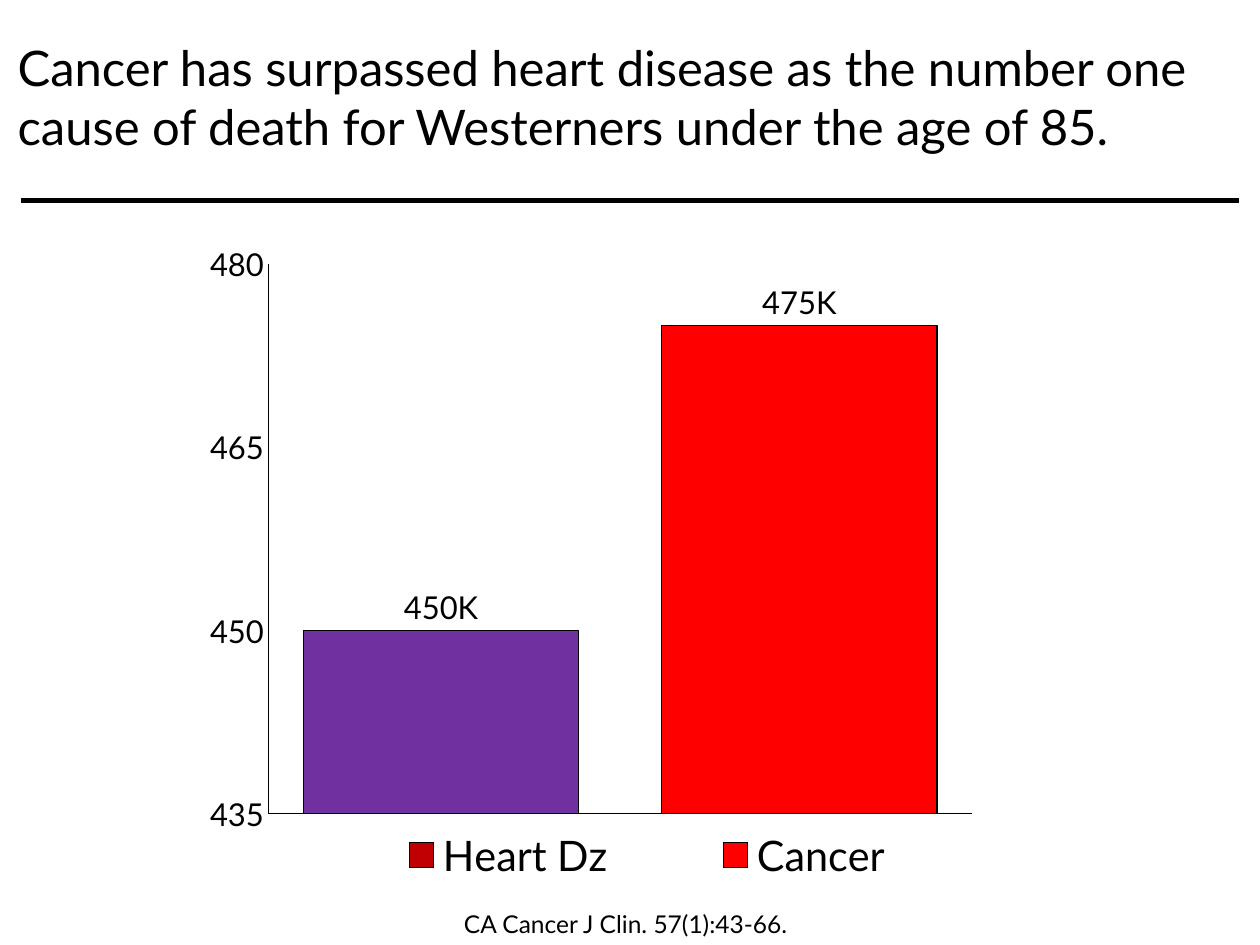
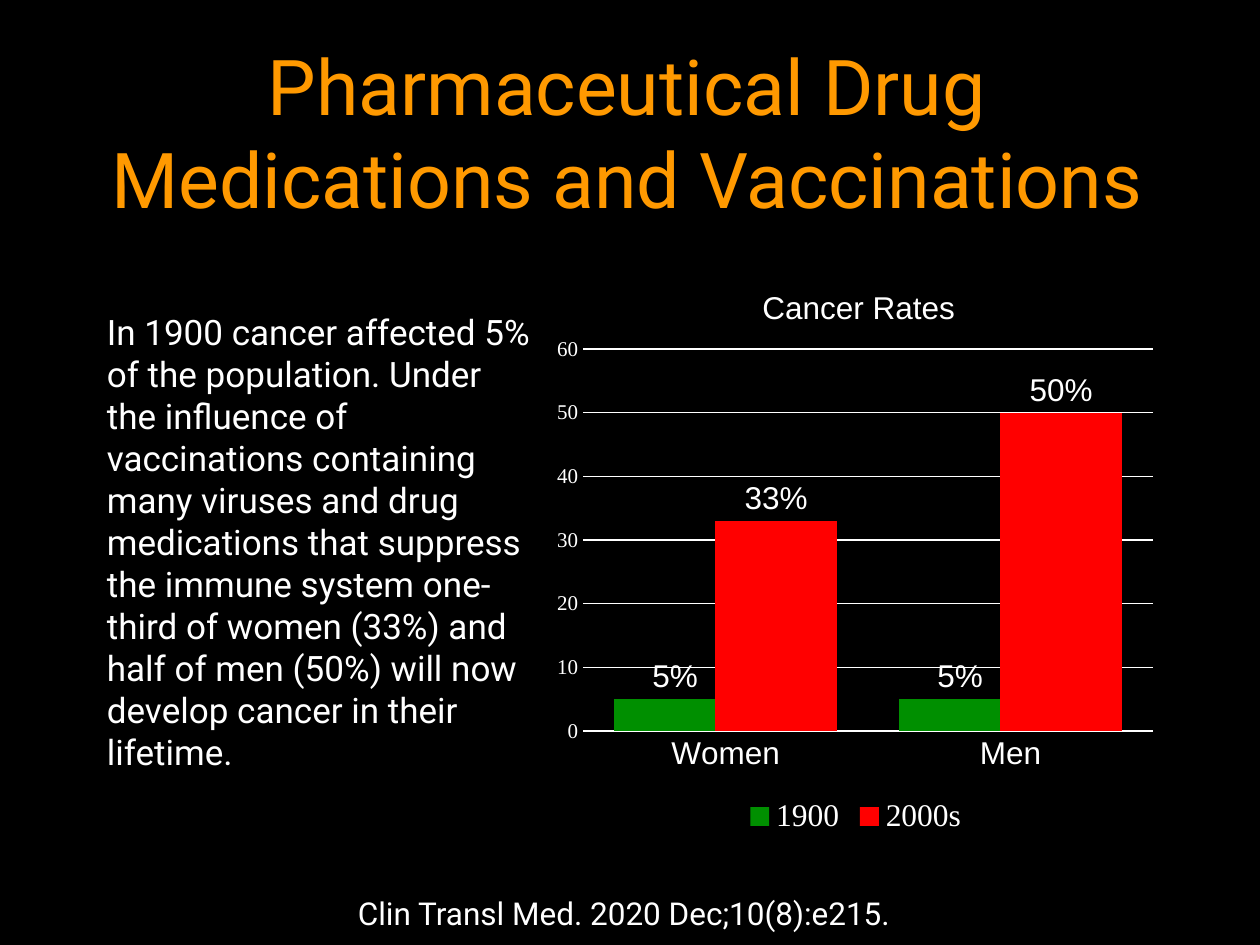
from dataclasses import dataclass, field
from typing import Any, NamedTuple, Optional

from lxml.etree import SubElement
from pptx import Presentation
from pptx.chart.data import CategoryChartData
from pptx.dml.color import RGBColor
from pptx.enum.chart import XL_CHART_TYPE as ChartType
from pptx.enum.chart import XL_LABEL_POSITION as LabelPos
from pptx.enum.chart import XL_LEGEND_POSITION as LegendPos
from pptx.enum.chart import XL_TICK_MARK as TickMark
from pptx.enum.shapes import MSO_CONNECTOR as Connector
from pptx.enum.text import MSO_ANCHOR as Anchor
from pptx.enum.text import PP_ALIGN as Align
from pptx.oxml.ns import qn
from pptx.util import Inches, Pt

# Slide grid: 120 columns by 90 rows
COLUMNS, ROWS = 120, 90
WIDTH, HEIGHT = Inches(10), Inches(7.5)

COLORS = {
    "black": "000000",
    "white": "FFFFFF",
    "orange": "FF9900",
    "dark_red": "C00000",
    "purple": "7030A0",
    "red": "FF0000",
    "green": "008F00",
}


class Area(NamedTuple):
    col: float
    row: float
    cols: float
    rows: float

    def emu(self) -> tuple[int, int, int, int]:
        return (int(self.col * WIDTH / COLUMNS), int(self.row * HEIGHT / ROWS),
                int(self.cols * WIDTH / COLUMNS), int(self.rows * HEIGHT / ROWS))


class Type(NamedTuple):
    face: str
    points: int
    color: str


@dataclass
class Words:
    text: str
    area: Area
    type: Type
    wrap: bool = True
    align: Align = Align.LEFT
    anchor: Anchor = Anchor.TOP


@dataclass
class Bars:
    name: str
    values: tuple[int, ...]
    color: str
    point_colors: dict[int, str] = field(default_factory=dict)


@dataclass
class ColumnChart:
    area: Area
    categories: tuple[str, ...]
    bars: tuple[Bars, ...]
    gap: int
    overlap: int
    scale: tuple[int, int, int]  # minimum, maximum, step
    label_format: str
    label_type: Type
    category_type: Type
    value_type: Type
    legend_type: Type
    axis_color: str
    grid_color: str
    layouts: dict[str, tuple[float, ...]]  # shares of the chart's size
    value_line: bool = False
    outlined: bool = False
    title: str = ""


def rgb(color: str) -> RGBColor:
    return RGBColor.from_string(COLORS[color])


def assign(target: Any, values: dict[str, Any]) -> None:
    for name, value in values.items():
        setattr(target, name, value)


def set_font(font: Any, type_: Type) -> None:
    assign(font, {"name": type_.face, "size": Pt(type_.points), "bold": False})
    font.color.rgb = rgb(type_.color)


def set_line(line: Any, color: str, points: float = 0.75) -> None:
    line.color.rgb = rgb(color)
    line.width = Pt(points)


def new_slide(deck: Any, background: str) -> Any:
    slide = deck.slides.add_slide(deck.slide_layouts[6])
    slide.background.fill.solid()
    slide.background.fill.fore_color.rgb = rgb(background)
    return slide


def draw_words(slide: Any, words: Words) -> None:
    frame = slide.shapes.add_textbox(*words.area.emu()).text_frame
    assign(frame, {"word_wrap": words.wrap, "vertical_anchor": words.anchor,
                   "text": words.text})
    paragraph = frame.paragraphs[0]
    paragraph.alignment = words.align
    set_font(paragraph.runs[0].font, words.type)


def draw_rule(slide: Any, area: Area, color: str, points: float) -> None:
    left, top, width, height = area.emu()
    rule = slide.shapes.add_connector(
        Connector.STRAIGHT, left, top, left + width, top + height)
    set_line(rule.line, color, points)
    SubElement(rule._element.spPr, qn("a:effectLst"))


def place(chart: Any, part: str, shares: tuple[float, ...]) -> None:
    """Fix a chart part by x, y and, if given, width and height."""
    parent = chart.element.xpath(f"c:chart/c:{part}")[0]
    for previous in parent.findall(qn("c:layout")):
        parent.remove(previous)
    layout = SubElement(parent, qn("c:layout"))
    leading = [child for child in parent if child.tag in (qn("c:tx"), qn("c:legendPos"))]
    parent.insert(len(leading), layout)
    manual = SubElement(layout, qn("c:manualLayout"))
    settings = {"layoutTarget": "inner"} if part == "plotArea" else {}
    settings |= {"xMode": "edge", "yMode": "edge"}
    settings |= dict(zip("xywh", map(str, shares)))
    for tag, value in settings.items():
        SubElement(manual, qn(f"c:{tag}")).set("val", value)


def style_axes(chart: Any, look: ColumnChart) -> None:
    minimum, maximum, step = look.scale
    for axis, type_ in ((chart.category_axis, look.category_type),
                        (chart.value_axis, look.value_type)):
        assign(axis, {"major_tick_mark": TickMark.NONE, "minor_tick_mark": TickMark.NONE})
        set_font(axis.tick_labels.font, type_)
        set_line(axis.format.line, look.axis_color)
    assign(chart.value_axis, {"minimum_scale": minimum, "maximum_scale": maximum,
                              "major_unit": step, "has_major_gridlines": True})
    set_line(chart.value_axis.major_gridlines.format.line, look.grid_color)
    if not look.value_line:
        chart.value_axis.format.line.fill.background()


def style_bars(series: Any, bars: Bars, look: ColumnChart) -> None:
    series.invert_if_negative = False
    fills = [(series.format, bars.color)]
    fills += [(series.points[i].format, color) for i, color in bars.point_colors.items()]
    for shape_format, color in fills:
        shape_format.fill.solid()
        shape_format.fill.fore_color.rgb = rgb(color)
        if look.outlined:
            set_line(shape_format.line, "black")
    labels = series.data_labels
    assign(labels, {"show_value": True, "number_format": look.label_format,
                    "number_format_is_linked": False, "position": LabelPos.OUTSIDE_END})
    set_font(labels.font, look.label_type)


def draw_chart(slide: Any, look: ColumnChart) -> None:
    data = CategoryChartData()
    data.categories = look.categories
    for bars in look.bars:
        data.add_series(bars.name, bars.values)
    chart = slide.shapes.add_chart(
        ChartType.COLUMN_CLUSTERED, *look.area.emu(), data).chart
    set_font(chart.font, Type("Times New Roman", 10, look.axis_color))
    assign(chart, {"has_title": bool(look.title), "has_legend": True})
    if look.title:
        heading = chart.chart_title.text_frame
        heading.text = look.title
        set_font(heading.paragraphs[0].runs[0].font, look.label_type)
    assign(chart.legend, {"position": LegendPos.BOTTOM, "include_in_layout": False})
    set_font(chart.legend.font, look.legend_type)
    plot = chart.plots[0]
    assign(plot, {"gap_width": look.gap, "overlap": look.overlap,
                  "vary_by_categories": False})
    style_axes(chart, look)
    for series, bars in zip(plot.series, look.bars):
        style_bars(series, bars, look)
    for part, shares in look.layouts.items():
        place(chart, part, shares)


@dataclass
class Page:
    background: str
    words: tuple[Words, ...]
    chart: ColumnChart
    rule: Optional[Area] = None


LATO_LABEL = Type("Lato", 18, "black")
ARIAL_LABEL = Type("Arial", 18, "white")

# Leading causes of death
DEATHS = Page(
    background="white",
    rule=Area(2, 19.1, 116, 0),
    words=(
        Words("Cancer has surpassed heart disease as the number one cause of death "
              "for Westerners under the age of 85.",
              Area(0.5, 3, 119, 15), Type("Lato", 28, "black")),
        Words("CA Cancer J Clin. 57(1):43-66.",
              Area(43, 86, 34, 4), Type("Lato", 14, "black"), wrap=False),
    ),
    chart=ColumnChart(
        area=Area(20, 16, 74, 70.7),
        categories=(" ",),
        bars=(Bars("Heart Dz", (450,), "dark_red", {0: "purple"}),
              Bars("Cancer", (475,), "red")),
        gap=25, overlap=-30, scale=(435, 480, 15),
        label_format='0"K"', label_type=LATO_LABEL,
        category_type=Type("Times New Roman", 24, "black"),
        value_type=LATO_LABEL, legend_type=Type("Lato", 24, "black"),
        axis_color="black", grid_color="white", value_line=True, outlined=True,
        layouts={"plotArea": (0.06, 0.13, 0.92, 0.74),
                 "legend": (0.11, 0.88, 0.89, 0.09)},
    ),
)

# Cancer rates then and now
RATES = Page(
    background="black",
    words=(
        Words("Pharmaceutical Drug Medications and Vaccinations",
              Area(8.75, 5, 102, 15), Type("Roboto", 44, "orange"),
              align=Align.CENTER, anchor=Anchor.MIDDLE),
        Words("In 1900 cancer affected 5% of the population. Under the influence of "
              "vaccinations containing many viruses and drug medications that suppress "
              "the immune system one-third of women (33%) and half of men (50%) will "
              "now develop cancer in their lifetime.",
              Area(9, 29, 43, 51), Type("Roboto", 20, "white")),
        Words("Clin Transl Med. 2020 Dec;10(8):e215.",
              Area(32.9, 84.6, 54.1, 4.8), Type("Roboto", 18, "white"), wrap=False),
    ),
    chart=ColumnChart(
        area=Area(52, 24, 59, 56),
        categories=("Women", "Men"),
        bars=(Bars("1900", (5, 5), "green"), Bars("2000s", (33, 50), "red")),
        gap=51, overlap=17, scale=(0, 60, 10),
        label_format='0"%"', label_type=ARIAL_LABEL, category_type=ARIAL_LABEL,
        value_type=Type("Times New Roman", 12, "white"),
        legend_type=Type("Times New Roman", 18, "white"),
        axis_color="white", grid_color="white", title="Cancer Rates",
        layouts={"title": (0.34, 0.05), "plotArea": (0.06, 0.165, 0.92, 0.65)},
    ),
)


def main() -> None:
    deck = Presentation()
    assign(deck, {"slide_width": WIDTH, "slide_height": HEIGHT})
    for page in (DEATHS, RATES):
        slide = new_slide(deck, page.background)
        draw_chart(slide, page.chart)
        for words in page.words:
            draw_words(slide, words)
        if page.rule:
            draw_rule(slide, page.rule, "black", 3)
    deck.save("out.pptx")


if __name__ == "__main__":
    main()
